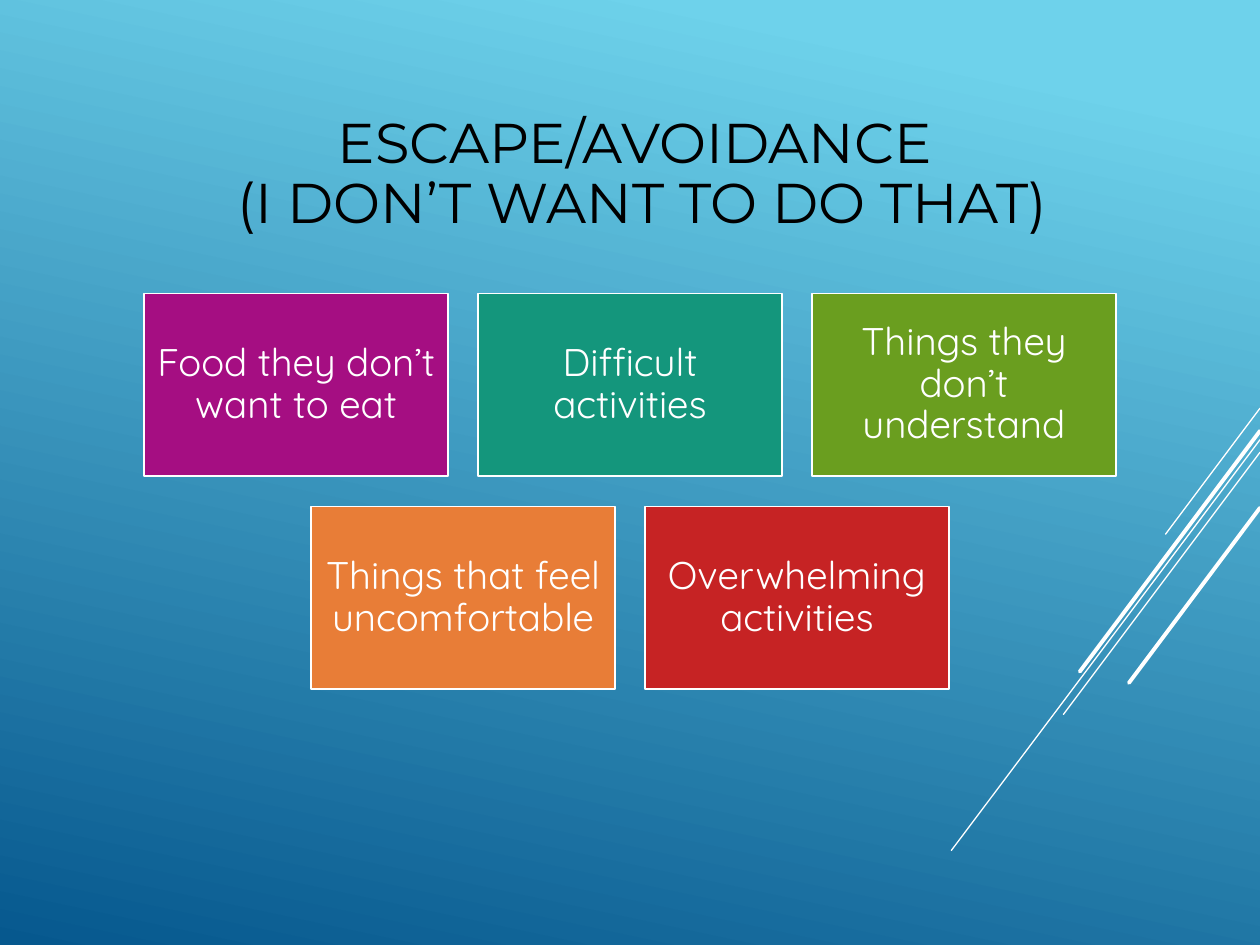
from lxml import etree
from pptx import Presentation
from pptx.dml.color import RGBColor
from pptx.enum import shapes, text
from pptx.oxml import ns
from pptx.util import Inches, Pt

COLORS = {
    "sky": "6ED2EB", "deep": "06588E", "white": "FFFFFF", "black": "000000",
    "purple": "A50E82", "teal": "14967C", "green": "6A9E1F",
    "orange": "E87D37", "red": "C62324",
}


def color(name):
    return RGBColor.from_string(COLORS[name])


def style_text(frame, words, font, size, ink):
    frame.word_wrap = True
    frame.text = words
    para = frame.paragraphs[0]
    para.alignment = text.PP_ALIGN.CENTER
    para.line_spacing = 0.9
    para.font.name = font
    para.font.size = Pt(size)
    para.font.color.rgb = color(ink)


deck = Presentation()
deck.slide_width, deck.slide_height = Inches(10), Inches(7.5)
page = deck.slides.add_slide(deck.slide_layouts[6])

# Gradient backdrop, light at the top right
backdrop = page.shapes.add_shape(
    shapes.MSO_SHAPE.RECTANGLE, 0, 0, deck.slide_width, deck.slide_height)
backdrop.shadow.inherit = False
backdrop.line.fill.background()
backdrop.fill.gradient()
backdrop.fill.gradient_angle = 258
for stop, position, name in zip(
        backdrop.fill.gradient_stops, (0.1, 1), ("sky", "deep")):
    stop.position = position
    stop.color.rgb = color(name)

# Title
title = page.shapes.add_textbox(
    Inches(1.17), Inches(0.27), Inches(7.86), Inches(1.65))
title.text_frame.vertical_anchor = text.MSO_ANCHOR.BOTTOM
style_text(title.text_frame, "ESCAPE/AVOIDANCE \v(I DON’T WANT TO DO THAT)",
           "Montserrat", 32, "black")

# Diagonal strokes: start x, start y, end x, end y, weight
strokes = [
    (10, 3.24, 9.25, 4.24, 0.75),
    (10, 3.49, 7.55, 6.75, 0.75),
    (10, 3.59, 8.44, 5.67, 0.75),
    (10, 3.42, 8.57, 5.33, 2.25),
    (10, 4.03, 8.96, 5.42, 2.25),
]
for *ends, weight in strokes:
    stroke = page.shapes.add_connector(
        shapes.MSO_CONNECTOR.STRAIGHT, *map(Inches, ends))
    stroke.line.color.rgb = color("white")
    stroke.line.width = Pt(weight)
    stroke.line._get_or_add_ln().set("cap", "rnd")
    etree.SubElement(stroke._element.spPr, ns.qn("a:effectLst"))

# Cards, each row centred on the page
card_width, card_height, gap, top = 2.41, 1.45, 0.24, 2.33
rows = [
    [("Food they don’t want to eat", "purple"),
     ("Difficult activities", "teal"),
     ("Things they don’t understand", "green")],
    [("Things that feel uncomfortable", "orange"),
     ("Overwhelming activities", "red")],
]
for row_number, row in enumerate(rows):
    row_width = len(row) * (card_width + gap) - gap
    for column, (words, fill) in enumerate(row):
        card = page.shapes.add_shape(
            shapes.MSO_SHAPE.RECTANGLE,
            Inches((10 - row_width) / 2 + column * (card_width + gap)),
            Inches(top + row_number * (card_height + gap)),
            Inches(card_width), Inches(card_height))
        card.shadow.inherit = False
        card.fill.solid()
        card.fill.fore_color.rgb = color(fill)
        card.line.color.rgb = color("white")
        card.line.width = Pt(1)
        frame = card.text_frame
        frame.margin_left = frame.margin_right = Inches(0.09)
        frame.margin_top = frame.margin_bottom = Inches(0.09)
        frame.vertical_anchor = text.MSO_ANCHOR.MIDDLE
        style_text(frame, words, "Quicksand", 22, "white")

deck.save("out.pptx")
